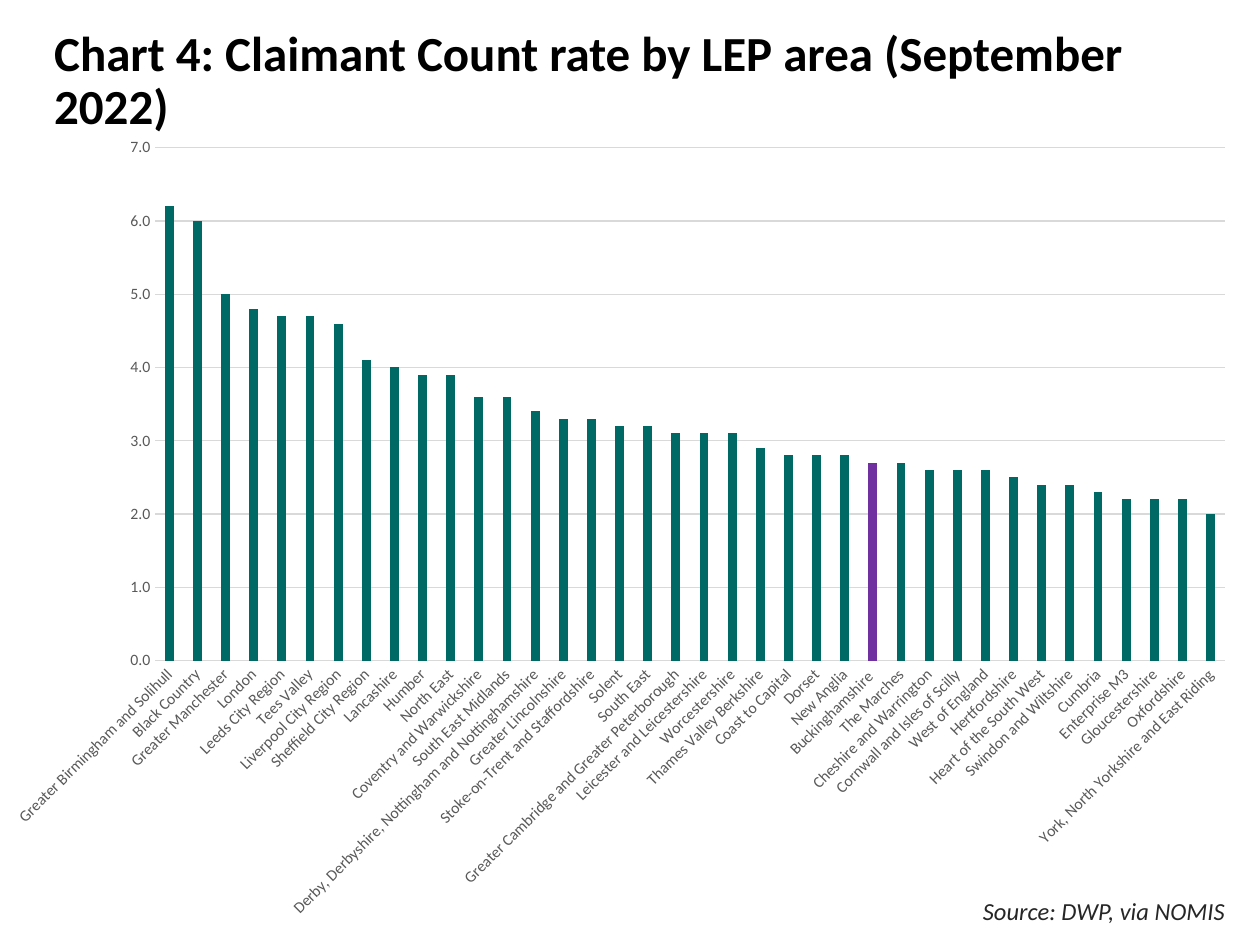
import pptx
import pptx.chart.data
import pptx.dml.color
import pptx.enum.chart
import pptx.enum.text
import pptx.oxml.ns
import pptx.util

Inches = pptx.util.Inches
Pt = pptx.util.Pt
RGBColor = pptx.dml.color.RGBColor
qn = pptx.oxml.ns.qn

BLACK = RGBColor(0x00, 0x00, 0x00)
WHITE = RGBColor(0xFF, 0xFF, 0xFF)
SOURCE_GREY = RGBColor(0x26, 0x26, 0x26)
LABEL_GREY = RGBColor(0x59, 0x59, 0x59)
GRID_GREY = RGBColor(0xD9, 0xD9, 0xD9)
TEAL = RGBColor(0x00, 0x69, 0x65)
PURPLE = RGBColor(0x70, 0x30, 0xA0)

HIGHLIGHTED_AREA = "Buckinghamshire "
CLAIMANT_RATES = {
    "Greater Birmingham and Solihull": 6.2,
    "Black Country": 6.0,
    "Greater Manchester": 5.0,
    "London": 4.8,
    "Leeds City Region": 4.7,
    "Tees Valley": 4.7,
    "Liverpool City Region": 4.6,
    "Sheffield City Region": 4.1,
    "Lancashire": 4.0,
    "Humber": 3.9,
    "North East": 3.9,
    "Coventry and Warwickshire": 3.6,
    "South East Midlands": 3.6,
    "Derby, Derbyshire, Nottingham and Nottinghamshire": 3.4,
    "Greater Lincolnshire": 3.3,
    "Stoke-on-Trent and Staffordshire": 3.3,
    "Solent": 3.2,
    "South East": 3.2,
    "Greater Cambridge and Greater Peterborough": 3.1,
    "Leicester and Leicestershire": 3.1,
    "Worcestershire": 3.1,
    "Thames Valley Berkshire": 2.9,
    "Coast to Capital": 2.8,
    "Dorset": 2.8,
    "New Anglia": 2.8,
    HIGHLIGHTED_AREA: 2.7,
    "The Marches": 2.7,
    "Cheshire and Warrington": 2.6,
    "Cornwall and Isles of Scilly": 2.6,
    "West of England": 2.6,
    "Hertfordshire": 2.5,
    "Heart of the South West": 2.4,
    "Swindon and Wiltshire": 2.4,
    "Cumbria": 2.3,
    "Enterprise M3": 2.2,
    "Gloucestershire": 2.2,
    "Oxfordshire": 2.2,
    "York, North Yorkshire and East Riding": 2.0,
}


class SlideBuilder:
    typeface = "Calibri"

    def __init__(self, slide):
        self.slide = slide

    def style_font(self, font, size, color):
        font.name = self.typeface
        font.size = Pt(size)
        font.color.rgb = color

    def place(self, shape, left, top, width, height):
        shape.left, shape.top = Inches(left), Inches(top)
        shape.width, shape.height = Inches(width), Inches(height)

    def title(self, text, *box):
        heading = self.slide.shapes.title
        self.place(heading, *box)
        heading.fill.solid()
        heading.fill.fore_color.rgb = WHITE
        frame = heading.text_frame
        frame.auto_size = pptx.enum.text.MSO_AUTO_SIZE.NONE
        frame.vertical_anchor = pptx.enum.text.MSO_ANCHOR.MIDDLE
        paragraph = frame.paragraphs[0]
        paragraph.alignment = pptx.enum.text.PP_ALIGN.LEFT
        paragraph.line_spacing = 0.9
        paragraph.space_before = Pt(0)
        run = paragraph.add_run()
        run.text = text
        self.style_font(run.font, 28, BLACK)
        run.font.bold = True

    def source_note(self, text, *box):
        note = self.slide.shapes.add_textbox(*map(Inches, box))
        frame = note.text_frame
        frame.word_wrap = True
        frame.auto_size = pptx.enum.text.MSO_AUTO_SIZE.SHAPE_TO_FIT_TEXT
        paragraph = frame.paragraphs[0]
        paragraph.alignment = pptx.enum.text.PP_ALIGN.RIGHT
        run = paragraph.add_run()
        run.text = text
        self.style_font(run.font, 14, SOURCE_GREY)
        run.font.italic = True

    def style_axis(self, axis):
        axis.major_tick_mark = pptx.enum.chart.XL_TICK_MARK.NONE
        axis.minor_tick_mark = pptx.enum.chart.XL_TICK_MARK.NONE
        self.style_font(axis.tick_labels.font, 9, LABEL_GREY)

    def style_line(self, line):
        line.color.rgb = GRID_GREY
        line.width = Pt(0.75)

    def column_chart(self, rates, highlighted, *box):
        data = pptx.chart.data.CategoryChartData(number_format="#,##0.0")
        data.categories = list(rates)
        data.add_series("Series 1", list(rates.values()))
        chart = self.slide.shapes.add_chart(
            pptx.enum.chart.XL_CHART_TYPE.COLUMN_CLUSTERED, *map(Inches, box), data).chart
        chart.has_legend = False
        chart.has_title = False
        self.style_font(chart.font, 10, BLACK)

        plot = chart.plots[0]
        plot.gap_width = 219
        plot.overlap = -27
        plot.vary_by_categories = False
        columns = plot.series[0]
        highlighted_column = columns.points[list(rates).index(highlighted)]
        for target, color in ((columns, TEAL), (highlighted_column, PURPLE)):
            target.format.fill.solid()
            target.format.fill.fore_color.rgb = color

        areas = chart.category_axis
        self.style_axis(areas)
        self.style_line(areas.format.line)
        label_body = areas._element.find(qn("c:txPr")).find(qn("a:bodyPr"))
        label_body.set("rot", "-2700000")
        label_body.set("vert", "horz")

        scale = chart.value_axis
        self.style_axis(scale)
        scale.minimum_scale, scale.maximum_scale, scale.major_unit = 0, 7, 1
        scale.format.line.fill.background()
        scale.has_major_gridlines = True
        self.style_line(scale.major_gridlines.format.line)
        scale.tick_labels.number_format = "#,##0.0"
        scale.tick_labels.number_format_is_linked = False


def main():
    deck = pptx.Presentation()
    deck.slide_width, deck.slide_height = Inches(10), Inches(7.5)
    builder = SlideBuilder(deck.slides.add_slide(deck.slide_layouts[5]))
    builder.title("Chart 4: Claimant Count rate by LEP area (September 2022)", 0.33, 0.27, 9.36, 0.77)
    builder.source_note("Source: DWP, via NOMIS", 7.44, 7.06, 2.38, 0.34)
    builder.column_chart(CLAIMANT_RATES, HIGHLIGHTED_AREA, -0.08, 0.97, 10, 6.44)
    deck.save("out.pptx")


if __name__ == "__main__":
    main()
